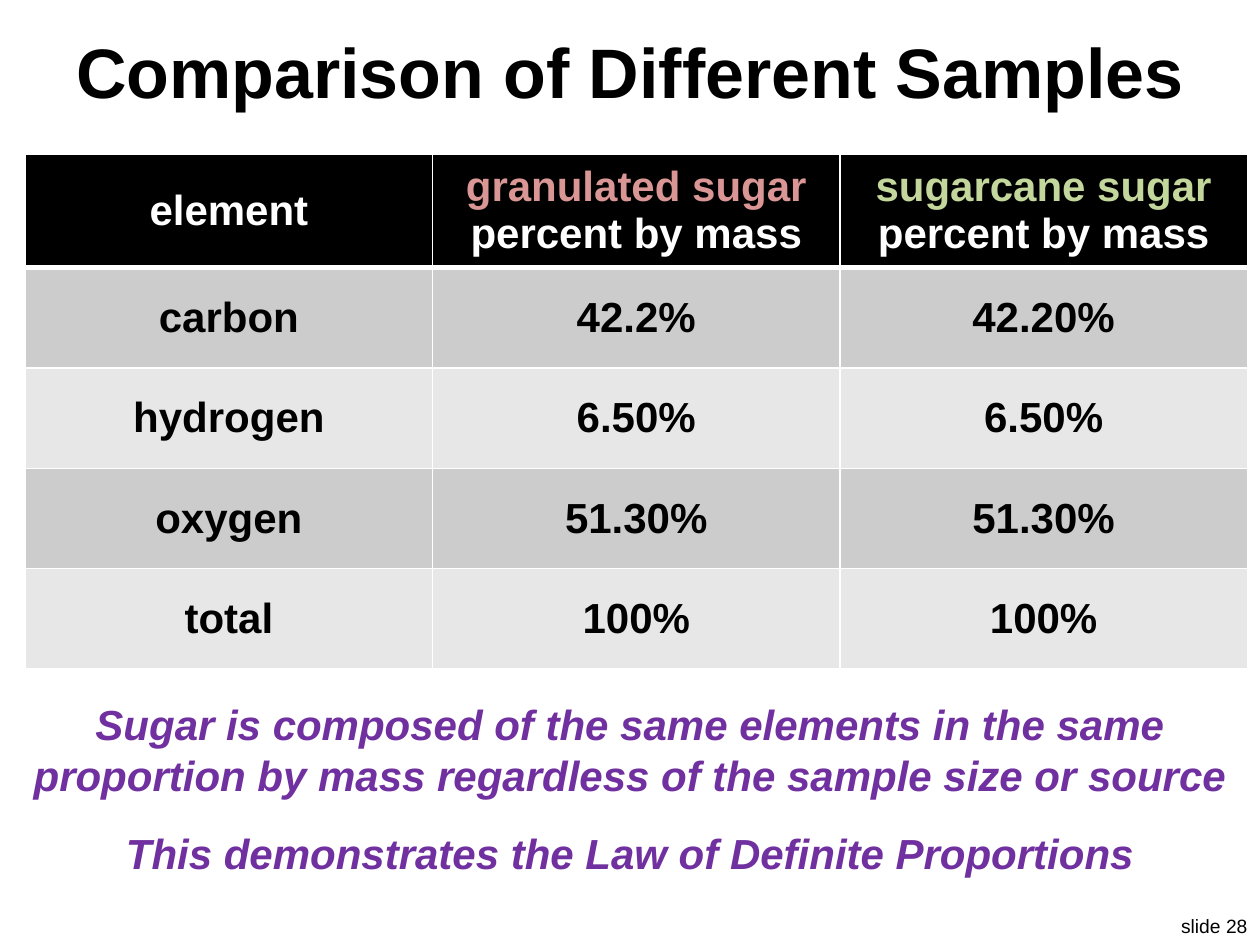
from lxml.etree import SubElement
from pptx import Presentation
from pptx.dml.color import RGBColor
from pptx.enum.text import MSO_ANCHOR as Anchor, MSO_AUTO_SIZE as AutoSize, PP_ALIGN as Align
from pptx.oxml.ns import qn
from pptx.util import Inches, Pt

WIDTH, HEIGHT = 10, 7.5
HEADER_SHARE = 0.21
TITLE = {"size": Pt(40), "bold": True}
CELL = {"size": Pt(24), "bold": True}
CONCLUSION = {"size": Pt(24), "bold": True, "italic": True}
FOOTER = {"size": Pt(11)}

HEADER = [
    [("element", "FFFFFF")],
    [("granulated sugar", "D99694"), ("percent by mass", "FFFFFF")],
    [("sugarcane sugar", "C3D69B"), ("percent by mass", "FFFFFF")],
]
SAMPLES = [
    ("carbon", "42.2%", "42.20%"),
    ("hydrogen", "6.50%", "6.50%"),
    ("oxygen", "51.30%", "51.30%"),
    ("total", "100%", "100%"),
]


def color(value):
    return RGBColor.from_string(value)


def share(left, top, width, height):
    return [Inches(part * side) for part, side in
            zip((left, top, width, height), (WIDTH, HEIGHT) * 2)]


def write(frame, lines, font, align=Align.CENTER):
    for index, (text, tint) in enumerate(lines):
        para = frame.paragraphs[0] if index == 0 else frame.add_paragraph()
        para.alignment = align
        span = para.add_run()
        span.text = text
        for name, value in {"name": "Arial", **font}.items():
            setattr(span.font, name, value)
        span.font.color.rgb = color(tint)


def add_text(page, box, text, tint, font, align=Align.CENTER, **layout):
    frame = page.shapes.add_textbox(*box).text_frame
    for name, value in {"word_wrap": True, **layout}.items():
        setattr(frame, name, value)
    write(frame, [(text, tint)], font, align)


def add_borders(cell, widths):
    properties = cell._tc.get_or_add_tcPr()
    for side, width in widths.items():
        line = SubElement(properties, qn(f"a:ln{side}"), w=str(Pt(width)))
        fill = SubElement(line, qn("a:solidFill"))
        SubElement(fill, qn("a:srgbClr"), val="FFFFFF")


def add_samples(page, box):
    rows = [HEADER] + [[[(text, "000000")] for text in row] for row in SAMPLES]
    left, top, width, height = box
    table = page.shapes.add_table(len(rows), len(HEADER), *box).table
    for column in table.columns:
        column.width = width // len(HEADER)
    header_height = int(height * HEADER_SHARE)
    for number, row in enumerate(table.rows):
        row.height = (height - header_height) // len(SAMPLES) if number else header_height
        shade = ("E7E7E7", "CCCCCC")[number % 2] if number else "000000"
        widths = {"L": 1, "R": 1, "T": 3 if number == 1 else 1, "B": 1 if number else 3}
        for cell, lines in zip(row.cells, rows[number]):
            add_borders(cell, widths)
            cell.fill.solid()
            cell.fill.fore_color.rgb = color(shade)
            cell.vertical_anchor = Anchor.MIDDLE
            write(cell.text_frame, lines, CELL)


def add_conclusions(page, box):
    left, top, width, height = box
    statements = [
        (0, 0.59, "Sugar is composed of the same elements in the same proportion "
                  "by mass regardless of the sample size or source"),
        (0.67, 0.33, "This demonstrates the Law of Definite Proportions"),
    ]
    for offset, depth, text in statements:
        area = left, top + int(height * offset), width, int(height * depth)
        add_text(page, area, text, "7030A0", CONCLUSION, auto_size=AutoSize.SHAPE_TO_FIT_TEXT)


def main():
    deck = Presentation()
    deck.slide_width, deck.slide_height = Inches(WIDTH), Inches(HEIGHT)
    page = deck.slides.add_slide(deck.slide_layouts[6])
    add_text(page, share(0.02, 0.02, 0.96, 0.11), "Comparison of Different Samples",
             "000000", TITLE, vertical_anchor=Anchor.MIDDLE)
    add_samples(page, share(0.02, 0.163, 0.97, 0.538))
    add_conclusions(page, share(0.01, 0.733, 0.98, 0.204))
    add_text(page, share(0.925, 0.961, 0.075, 0.039), "slide 28", "000000", FOOTER,
             Align.RIGHT, word_wrap=False, auto_size=AutoSize.SHAPE_TO_FIT_TEXT)
    deck.save("out.pptx")


if __name__ == "__main__":
    main()
